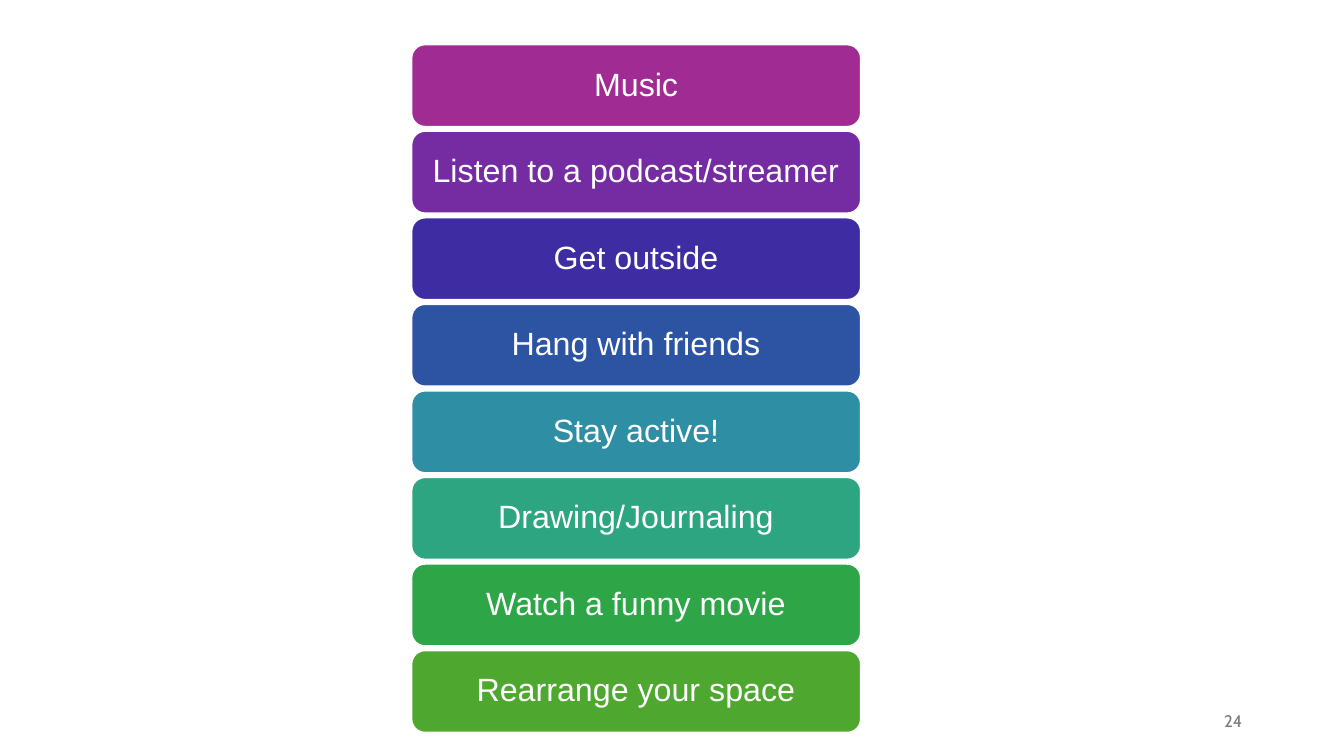
from dataclasses import dataclass

from pptx import Presentation
from pptx.dml.color import RGBColor
from pptx.enum.shapes import MSO_SHAPE
from pptx.enum.text import MSO_ANCHOR, PP_ALIGN
from pptx.util import Inches, Pt


@dataclass(frozen=True)
class Theme:
    white: str = "FFFFFF"
    page_gray: str = "797979"
    body_font: str = "Arial"
    page_font: str = "Cabin"
    body_size: float = 23
    page_size: float = 12
    outline: float = 1.5


THEME = Theme()

# Each activity with the colour of its bar
ACTIVITIES = [
    ("Music", "A02B93"),
    ("Listen to a podcast/streamer", "752BA1"),
    ("Get outside", "3D2CA2"),
    ("Hang with friends", "2C54A3"),
    ("Stay active!", "2D8EA4"),
    ("Drawing/Journaling", "2DA581"),
    ("Watch a funny movie", "2EA648"),
    ("Rearrange your space", "4EA72E"),
]


def write_text(frame, text, *, font, size, color, align, line_spacing=1.0):
    frame.word_wrap = True
    frame.vertical_anchor = MSO_ANCHOR.MIDDLE
    frame.margin_left = frame.margin_right = Inches(0.1)
    frame.margin_top = frame.margin_bottom = Inches(0.05)
    paragraph = frame.paragraphs[0]
    paragraph.alignment = align
    paragraph.line_spacing = line_spacing
    run = paragraph.add_run()
    run.text = text
    run.font.name = font
    run.font.size = Pt(size)
    run.font.color.rgb = RGBColor.from_string(color)


def add_activity_stack(slide, left, top, width, height, gap=0.04):
    """Stack equal bars, one per activity, to fill the given box."""
    pitch = (height + gap) / len(ACTIVITIES)
    for index, (activity, color) in enumerate(ACTIVITIES):
        bar = slide.shapes.add_shape(
            MSO_SHAPE.ROUNDED_RECTANGLE,
            Inches(left), Inches(top + index * pitch),
            Inches(width), Inches(pitch - gap),
        )
        bar.shadow.inherit = False
        bar.fill.solid()
        bar.fill.fore_color.rgb = RGBColor.from_string(color)
        bar.line.color.rgb = RGBColor.from_string(THEME.white)
        bar.line.width = Pt(THEME.outline)
        write_text(bar.text_frame, activity, font=THEME.body_font,
                   size=THEME.body_size, color=THEME.white,
                   align=PP_ALIGN.CENTER, line_spacing=0.9)


def add_page_number(slide, number, left, top, width, height):
    page_number = slide.shapes.add_textbox(
        Inches(left), Inches(top), Inches(width), Inches(height))
    write_text(page_number.text_frame, number, font=THEME.page_font,
               size=THEME.page_size, color=THEME.page_gray,
               align=PP_ALIGN.RIGHT)


def main():
    deck = Presentation()
    deck.slide_width, deck.slide_height = Inches(13.33), Inches(7.5)
    slide = deck.slides.add_slide(deck.slide_layouts[6])
    add_activity_stack(slide, 4.08, 0.44, 4.46, 6.83)
    add_page_number(slide, "24", 9.42, 6.95, 3, 0.4)
    deck.save("out.pptx")


if __name__ == "__main__":
    main()
